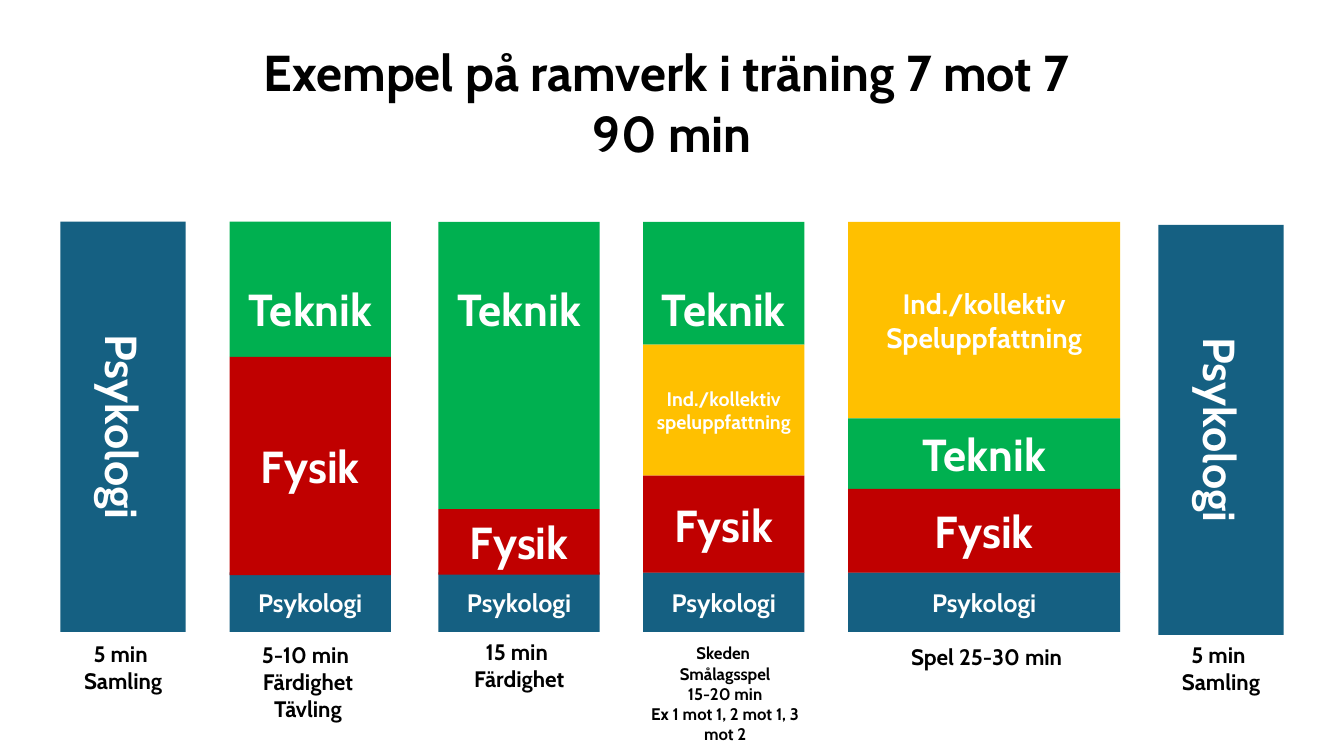
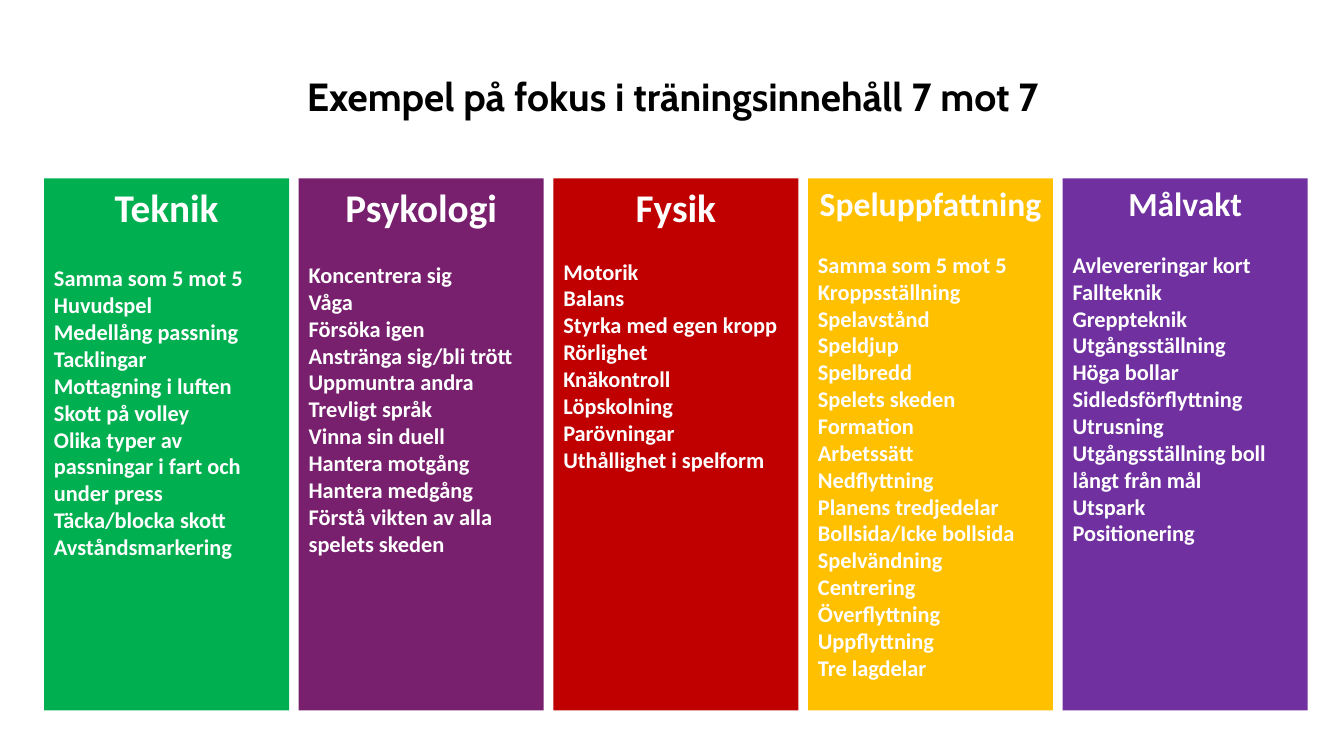
from pptx import Presentation
from pptx.dml.color import RGBColor
from pptx.enum.shapes import MSO_SHAPE
from pptx.enum.text import MSO_ANCHOR, PP_ALIGN
from pptx.util import Pt

HUES = {
    "black": "000000", "white": "FFFFFF", "green": "00B050", "blue": "156082",
    "red": "C00000", "gold": "FFC000", "plum": "78206E", "violet": "7030A0",
}
HEAD, BODY = "Cabin", "Calibri"
TOP, TALL, FOOT = 158.4, 293, 42.5  # training columns and their blue foot


def hue(name):
    return RGBColor.from_string(HUES[name])


def write(frame, lines, size, color="white", face=HEAD, align=PP_ALIGN.CENTER):
    """Add one bold paragraph per line, starting with the empty first one."""
    frame.word_wrap = True
    for line in lines:
        fresh = not frame.paragraphs[0].runs
        para = frame.paragraphs[0] if fresh else frame.add_paragraph()
        para.alignment = align
        run = para.add_run()
        run.text = line
        font = run.font
        font.size, font.name, font.bold = Pt(size), face, True
        font.color.rgb = hue(color)


def label(slide, box, lines, size):
    area = slide.shapes.add_textbox(*map(Pt, box))
    write(area.text_frame, lines, size, "black")


def block(slide, box, color, anchor=MSO_ANCHOR.MIDDLE):
    shape = slide.shapes.add_shape(MSO_SHAPE.RECTANGLE, *map(Pt, box))
    shape.shadow.inherit = False
    shape.fill.solid()
    shape.fill.fore_color.rgb = hue(color)
    shape.line.fill.background()
    shape.text_frame.vertical_anchor = anchor
    return shape


def pillar(slide, box):
    """Full-height block with its word turned sideways."""
    shape = block(slide, box, "blue")
    shape.element.txBody.bodyPr.set("vert", "vert")
    write(shape.text_frame, ["Psykologi"], 32)


def stack(slide, box, bands):
    """Bands from the top down, above a psychology foot."""
    left, top, wide, tall = box
    foot = block(slide, (left, top + tall - FOOT, wide, FOOT), "blue")
    write(foot.text_frame, ["Psykologi"], 18)
    for text, color, high, size, drop in bands:
        anchor = MSO_ANCHOR.TOP if drop else MSO_ANCHOR.MIDDLE
        band = block(slide, (left, top, wide, high), color, anchor)
        if drop:
            band.text_frame.margin_top = Pt(drop)
        write(band.text_frame, [text], size)
        top += high


def topic(slide, box, color, title, size, gap, items):
    """Coloured panel: centred heading, then a plain list."""
    frame = block(slide, box, color, MSO_ANCHOR.TOP).text_frame
    write(frame, [title], size, face=BODY)
    frame.paragraphs[0].space_after = Pt(gap)
    write(frame, items, 16, face=BODY, align=PP_ALIGN.LEFT)


def skill(high, drop=42.5):
    return "Teknik", "green", high, 32, drop


def body(high):
    return "Fysik", "red", high, 32, 0


def sense(text, high, size):
    return "Ind./kollektiv " + text, "gold", high, size, 0


# left, width, bands (none for a pillar)
COLUMNS = [
    (43.2, 89.5, []),
    (164, 115.2, [skill(96.5), body(156)]),
    (313.2, 115.2, [skill(205.2), body(46.8)]),
    (459.4, 115.2, [skill(87.8), sense("speluppfattning", 93.6, 14), body(69.2)]),
    (605.8, 194.4, [sense("Speluppfattning", 140.4, 20), skill(50.4, 0), body(59.8)]),
    (827.4, 89.5, []),
]
# left, top, width, size, lines
NOTES = [
    (43.2, 453.6, 89.5, 16, ["5 min ", "Samling"]),
    (152, 454.3, 136, 16, ["5-10 min ", "Färdighet", "Tävling"]),
    (326.2, 452.2, 89.5, 16, ["15 min ", "Färdighet"]),
    (450, 455.8, 136, 12,
     ["Skeden ", "Smålagsspel", "15-20 min", "Ex 1 mot 1, 2 mot 1, 3 mot 2"]),
    (638.6, 455.8, 136, 16, ["Spel 25-30 min "]),
    (827.4, 454.3, 89.5, 16, ["5 min ", "Samling"]),
]
# colour, heading, heading size, gap below, items
TOPICS = [
    ("green", "Teknik", 28, 24.4, [
        "Samma som 5 mot 5", "Huvudspel", "Medellång passning", "Tacklingar",
        "Mottagning i luften", "Skott på volley",
        "Olika typer av passningar i fart och under press",
        "Täcka/blocka skott", "Avståndsmarkering"]),
    ("plum", "Psykologi", 28, 22, [
        "Koncentrera sig", "Våga", "Försöka igen", "Anstränga sig/bli trött",
        "Uppmuntra andra", "Trevligt språk", "Vinna sin duell",
        "Hantera motgång", "Hantera medgång",
        "Förstå vikten av alla spelets skeden"]),
    ("red", "Fysik", 28, 19.5, [
        "Motorik", "Balans", "Styrka med egen kropp", "Rörlighet",
        "Knäkontroll", "Löpskolning", "Parövningar", "Uthållighet i spelform"]),
    ("gold", "Speluppfattning", 24, 19.5, [
        "Samma som 5 mot 5", "Kroppsställning", "Spelavstånd", "Speldjup",
        "Spelbredd", "Spelets skeden", "Formation", "Arbetssätt",
        "Nedflyttning", "Planens tredjedelar", "Bollsida/Icke bollsida",
        "Spelvändning", "Centrering", "Överflyttning", "Uppflyttning",
        "Tre lagdelar"]),
    ("violet", "Målvakt", 24, 19.5, [
        "Avlevereringar kort", "Fallteknik", "Greppteknik", "Utgångsställning",
        "Höga bollar", "Sidledsförflyttning", "Utrusning",
        "Utgångsställning boll långt från mål", "Utspark", "Positionering"]),
]


def session(slide):
    label(slide, (43.2, 26, 874, 94),
          ["Exempel på ramverk i träning 7 mot 7 ", "90 min"], 36)
    for left, wide, bands in COLUMNS:
        # The closing pillar stands slightly lower
        top = TOP + 2.2 if left == COLUMNS[-1][0] else TOP
        box = left, top, wide, TALL
        if bands:
            stack(slide, box, bands)
        else:
            pillar(slide, box)
    for left, top, wide, size, lines in NOTES:
        label(slide, (left, top, wide, len(lines) * size * 1.22 + 7.2), lines, size)


def focus(slide):
    label(slide, (103, 48.2, 754.6, 41),
          ["Exempel på fokus i träningsinnehåll 7 mot 7"], 28)
    wide, gap = 175, 6.9
    for spot, parts in enumerate(TOPICS):
        left = 31.5 + spot * (wide + gap)
        topic(slide, (left, 127.4, wide, 380), *parts)


def main():
    deck = Presentation()
    deck.slide_width, deck.slide_height = Pt(960), Pt(540)
    for draw in (session, focus):
        draw(deck.slides.add_slide(deck.slide_layouts[6]))
    deck.save("out.pptx")


if __name__ == "__main__":
    main()
